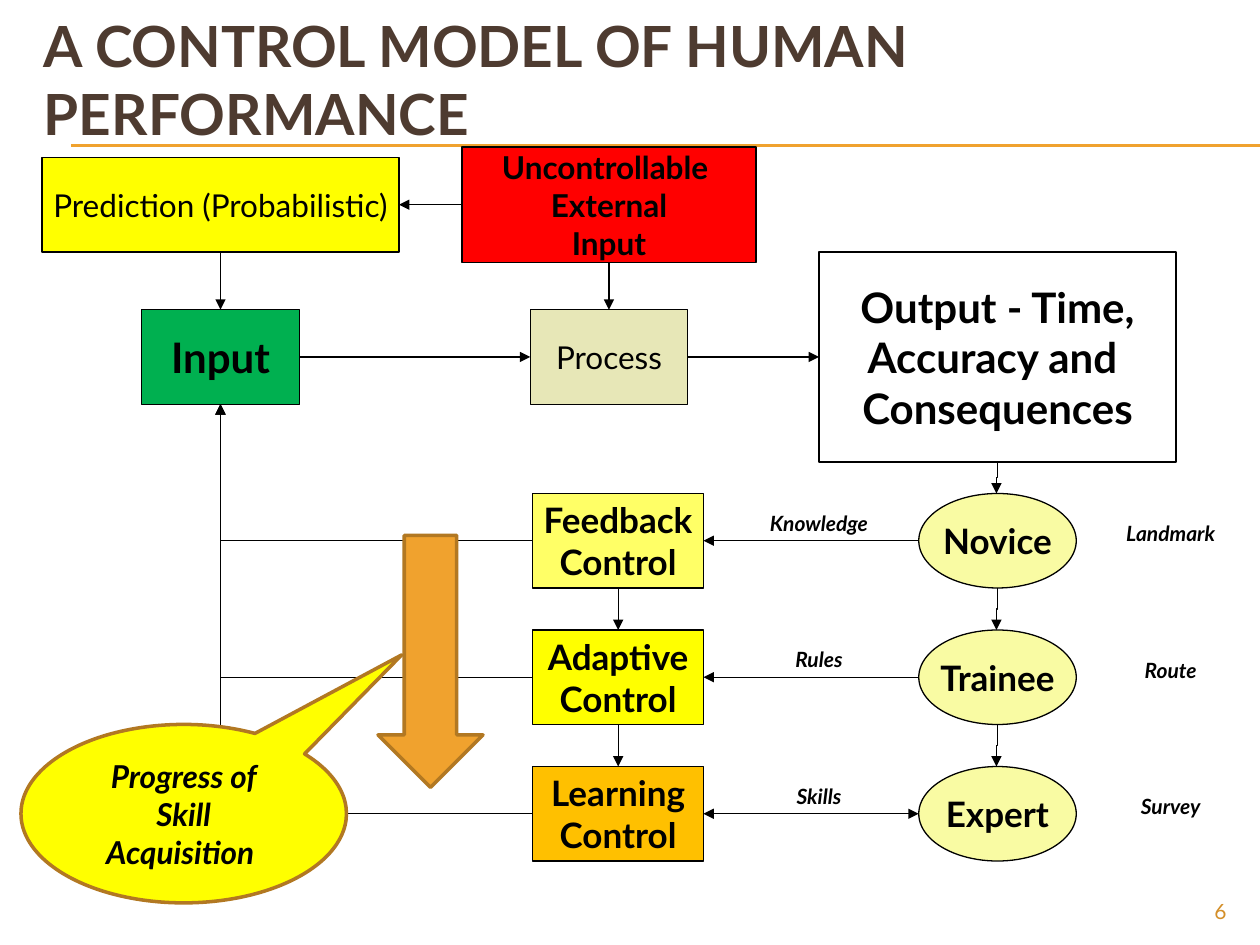
from typing import NamedTuple

from lxml import etree
from pptx import Presentation
from pptx.dml.color import RGBColor
from pptx.enum.shapes import MSO_CONNECTOR, MSO_SHAPE
from pptx.enum.text import MSO_ANCHOR, PP_ALIGN
from pptx.oxml.ns import qn
from pptx.util import Inches, Pt

RECT, OVAL = MSO_SHAPE.RECTANGLE, MSO_SHAPE.OVAL
CALL, DOWN = MSO_SHAPE.OVAL_CALLOUT, MSO_SHAPE.DOWN_ARROW
LINE, ELBOW = MSO_CONNECTOR.STRAIGHT, MSO_CONNECTOR.ELBOW
LEFT, MID, RIGHT = PP_ALIGN.LEFT, PP_ALIGN.CENTER, PP_ALIGN.RIGHT
TOP, CENTER = MSO_ANCHOR.TOP, MSO_ANCHOR.MIDDLE

WIDE, HIGH = Inches(10), Inches(7.5)
COLS, ROWS = 120, 90
FONT = "Lato"
HEX = {
    "black": "000000", "brown": "4E3B30", "amber": "F0A22E", "rust": "B27822",
    "page": "D48F29", "green": "00B050", "yellow": "FFFF00", "lemon": "FFFF66",
    "gold": "FFC000", "red": "FF0000", "sand": "E7E7B7", "pale": "F9FBA3",
}


class Area(NamedTuple):
    col: float
    row: float
    cols: float
    rows: float


class Style(NamedTuple):
    size: float
    bold: bool = True
    slant: bool = False
    color: str = "black"
    align: PP_ALIGN = MID


class Node(NamedTuple):
    kind: MSO_SHAPE
    area: Area
    fill: str | None
    text: str
    style: Style
    edge: str = "black"
    width: float = 0.75
    wrap: bool = False


class Link(NamedTuple):
    col: float
    row: float
    to_col: float
    to_row: float
    tail: bool = True
    head: bool = False
    color: str = "black"


class Step(NamedTuple):
    mode: str
    fill: str
    stage: str
    skill: str
    map: str


HEAD, BODY, PLAIN = Style(24), Style(20), Style(18, False)
NOTE, BOLD = Style(12, slant=True), Style(18)

NODES = [
    Node(RECT, Area(13.5, 29.5, 15, 9), "green", "Input", HEAD),
    Node(RECT, Area(50.5, 29.5, 15, 9), "sand", "Process", PLAIN),
    Node(RECT, Area(78, 24, 34, 20), None,
         "Output - Time,\nAccuracy and \nConsequences", HEAD),
    Node(RECT, Area(4, 15, 34, 9), "yellow", "Prediction (Probabilistic)", PLAIN),
    Node(RECT, Area(44, 14, 28, 11), "red", "Uncontrollable \nExternal\nInput", BOLD),
]
LINKS = [
    Link(6.75, 13.8, COLS, 13.8, tail=False, color="amber"),
    Link(6.75, 13.9, COLS, 13.9, tail=False, color="amber"),
    Link(28.5, 34, 50.5, 34),
    Link(65.5, 34, 78, 34),
    Link(58, 25, 58, 29.5),
    Link(21, 24, 21, 29.5),
    Link(44, 19.5, 38, 19.5),
]
STEPS = [
    Step("Feedback\nControl", "lemon", "Novice", "Knowledge", "Landmark"),
    Step("Adaptive\nControl", "yellow", "Trainee", "Rules", "Route"),
    Step("Learning\nControl", "gold", "Expert", "Skills", "Survey"),
]
FIRST, PITCH, TALL = 47, 13, 9
MODE, STAGE, BACK = 50.75, 87.5, 21


def across(cols: float) -> int:
    return round(WIDE * cols / COLS)


def down(rows: float) -> int:
    return round(HIGH * rows / ROWS)


def box(area: Area) -> tuple:
    return across(area.col), down(area.row), across(area.cols), down(area.rows)


def tint(name: str) -> RGBColor:
    return RGBColor.from_string(HEX[name])


def write(shape, text: str, style: Style, wrap: bool, anchor: MSO_ANCHOR) -> None:
    frame = shape.text_frame
    frame.text = text
    frame.word_wrap = wrap
    frame.vertical_anchor = anchor
    for para in frame.paragraphs:
        para.alignment = style.align
        font = para.font
        font.name, font.size = FONT, Pt(style.size)
        font.bold, font.italic = style.bold, style.slant
        font.color.rgb = tint(style.color)


def label(shapes, area: Area, text: str, style: Style,
          anchor: MSO_ANCHOR = TOP) -> None:
    write(shapes.add_textbox(*box(area)), text, style, True, anchor)


def draw(shapes, node: Node):
    shape = shapes.add_shape(node.kind, *box(node.area))
    shape.shadow.inherit = False
    if node.fill:
        shape.fill.solid()
        shape.fill.fore_color.rgb = tint(node.fill)
    else:
        shape.fill.background()
    shape.line.color.rgb = tint(node.edge)
    shape.line.width = Pt(node.width)
    if node.text:
        write(shape, node.text, node.style, node.wrap, CENTER)
    return shape


def join(shapes, link: Link, kind: MSO_CONNECTOR = LINE):
    wire = shapes.add_connector(kind, across(link.col), down(link.row),
                                across(link.to_col), down(link.to_row))
    wire.line.color.rgb = tint(link.color)
    wire.line.width = Pt(0.75)
    props = wire.line._get_or_add_ln()
    for tag, shown in (("a:headEnd", link.head), ("a:tailEnd", link.tail)):
        if shown:
            etree.SubElement(props, qn(tag), type="triangle")
    etree.SubElement(wire._element.spPr, qn("a:effectLst"))
    return wire


def loop(shapes, row: float) -> None:
    wire = join(shapes, Link(MODE, row, BACK, 38.5), ELBOW)
    wire._element.spPr.find(qn("a:prstGeom")).set("prst", "bentConnector2")


def jog(shapes, start: float, end: float) -> None:
    col, row, half, shift = 94.95, (start + end) / 2, (end - start) / 2, 0.05
    wire = join(shapes, Link(col - half, row - shift, col + half, row + shift), ELBOW)
    wire._element.spPr.find(qn("a:xfrm")).set("rot", "5400000")


def ladder(shapes) -> None:
    last = len(STEPS) - 1
    above = 44
    for i, step in enumerate(STEPS):
        top = FIRST + i * PITCH
        mid, end = top + TALL / 2, top + TALL
        loop(shapes, mid)
        draw(shapes, Node(RECT, Area(MODE, top, 16.25, TALL), step.fill, step.mode, BODY))
        draw(shapes, Node(OVAL, Area(STAGE, top, 15, TALL), "pale", step.stage, BODY))
        join(shapes, Link(STAGE, mid, 67, mid, head=i == last))
        jog(shapes, above, top)
        if i < last:
            join(shapes, Link(58.88, end, 58.88, top + PITCH))
        label(shapes, Area(69.5, top + 1, 17, 3.6), step.skill, NOTE)
        label(shapes, Area(103, top + 2, 17, 3.6), step.map, NOTE)
        above = end


def main() -> None:
    deck = Presentation()
    deck.slide_width, deck.slide_height = WIDE, HIGH
    shapes = deck.slides.add_slide(deck.slide_layouts[6]).shapes
    for link in LINKS:
        join(shapes, link)
    label(shapes, Area(3, 2, 111, 11), "A CONTROL MODEL OF HUMAN PERFORMANCE",
          Style(32.4, color="brown", align=LEFT), CENTER)
    label(shapes, Area(108, 85, 10, 3.2), "6",
          Style(12, False, color="page", align=RIGHT))
    for node in NODES:
        draw(shapes, node)
    ladder(shapes)
    bubble = draw(shapes, Node(CALL, Area(2, 69, 31, 17), "yellow",
                               "Progress of Skill Acquisition ",
                               Style(18, slant=True), "rust", 2, True))
    bubble.adjustments[0], bubble.adjustments[1] = 0.67, -0.89
    draw(shapes, Node(DOWN, Area(36, 51, 10, 24), "amber", "", BODY, "rust", 2))
    deck.save("out.pptx")


if __name__ == "__main__":
    main()
